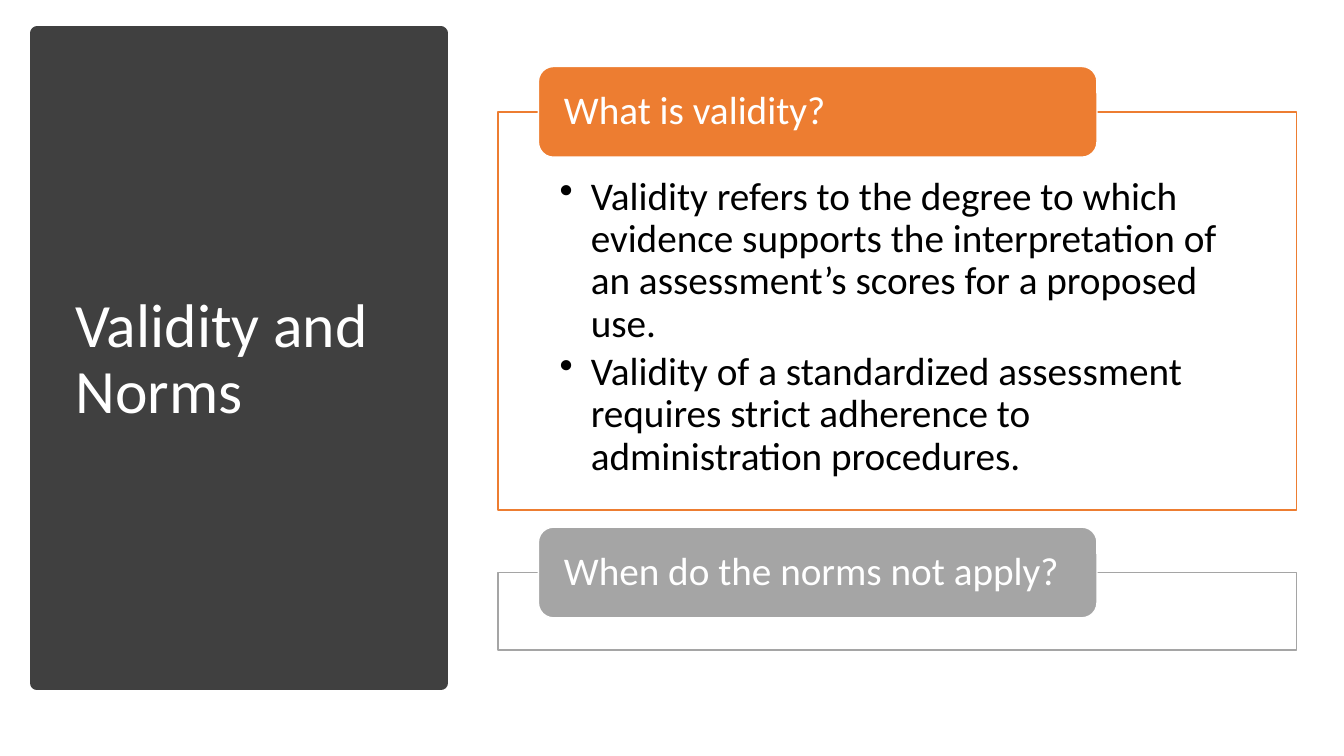
from lxml.etree import SubElement
from pptx import Presentation
from pptx.dml.color import RGBColor
from pptx.enum.shapes import MSO_SHAPE
from pptx.enum.text import MSO_ANCHOR, PP_ALIGN
from pptx.oxml.ns import qn
from pptx.util import Inches, Pt

WHITE = RGBColor(0xFF, 0xFF, 0xFF)
BLACK = RGBColor(0, 0, 0)
CHARCOAL = RGBColor(0x40, 0x40, 0x40)
ORANGE = RGBColor(0xED, 0x7D, 0x31)
GRAY = RGBColor(0xA5, 0xA5, 0xA5)
FONT = "Calibri"

FRAME_LEFT, FRAME_WIDTH = 4.94, 7.92
HEADER_LEFT, HEADER_WIDTH, HEADER_HEIGHT = 5.34, 5.54, 0.9

SECTIONS = [
    ("What is validity?", ORANGE, 1.11, 3.95, [
        "Validity refers to the degree to which evidence supports the "
        "interpretation of an assessment’s scores for a proposed use.",
        "Validity of a standardized assessment requires strict adherence to "
        "administration procedures.",
    ]),
    ("When do the norms not apply?", GRAY, 5.68, 0.77, []),
]


def add_block(page, kind, left, top, width, height, fill, line, line_width):
    block = page.shapes.add_shape(
        kind, Inches(left), Inches(top), Inches(width), Inches(height))
    block.shadow.inherit = False
    block.fill.solid()
    block.fill.fore_color.rgb = fill
    block.line.color.rgb = line
    block.line.width = Pt(line_width)
    return block


def set_text(box, paragraphs, size, color, anchor, insets, space_after=0):
    """Fill the box with left-aligned paragraphs; insets are left, top, right, bottom."""
    frame = box.text_frame
    frame.word_wrap = True
    frame.vertical_anchor = anchor
    (frame.margin_left, frame.margin_top,
     frame.margin_right, frame.margin_bottom) = map(Inches, insets)
    frame.text = "\n".join(paragraphs)
    for para in frame.paragraphs:
        para.alignment = PP_ALIGN.LEFT
        para.line_spacing = 0.9
        para.space_after = Pt(space_after)
        for span in para.runs:
            span.font.name = FONT
            span.font.size = Pt(size)
            span.font.color.rgb = color


def add_bullet(para):
    properties = para._p.get_or_add_pPr()
    properties.set("marL", str(Inches(0.31)))
    properties.set("indent", str(Inches(-0.31)))
    SubElement(properties, qn("a:buChar"), char="•")


def add_title_panel(page, title):
    add_block(page, MSO_SHAPE.RECTANGLE, 0.37, 0.33, 4, 6.45, CHARCOAL, CHARCOAL, 10)
    box = page.shapes.add_textbox(
        Inches(0.65), Inches(0.7), Inches(3.46), Inches(5.75))
    set_text(box, [title], 44, WHITE, MSO_ANCHOR.MIDDLE, (0.1, 0.05, 0.1, 0.05))


def add_section(page, heading, color, top, height, bullets):
    """Add an outlined frame with a heading tab centred on its top edge."""
    frame = add_block(page, MSO_SHAPE.RECTANGLE, FRAME_LEFT, top,
                      FRAME_WIDTH, height, WHITE, color, 1)
    if bullets:
        set_text(frame, bullets, 28, BLACK, MSO_ANCHOR.TOP,
                 (0.61, 0.64, 0.61, 0.22), space_after=4.2)
        for para in frame.text_frame.paragraphs:
            add_bullet(para)
    header = add_block(page, MSO_SHAPE.ROUNDED_RECTANGLE, HEADER_LEFT,
                       top - HEADER_HEIGHT / 2, HEADER_WIDTH, HEADER_HEIGHT,
                       color, WHITE, 1)
    set_text(header, [heading], 28, WHITE, MSO_ANCHOR.MIDDLE, (0.21, 0, 0.21, 0))


def main():
    deck = Presentation()
    deck.slide_width, deck.slide_height = Inches(13.33), Inches(7.5)
    page = deck.slides.add_slide(deck.slide_layouts[6])
    add_title_panel(page, "Validity and Norms")
    for section in SECTIONS:
        add_section(page, *section)
    deck.save("out.pptx")


if __name__ == "__main__":
    main()
